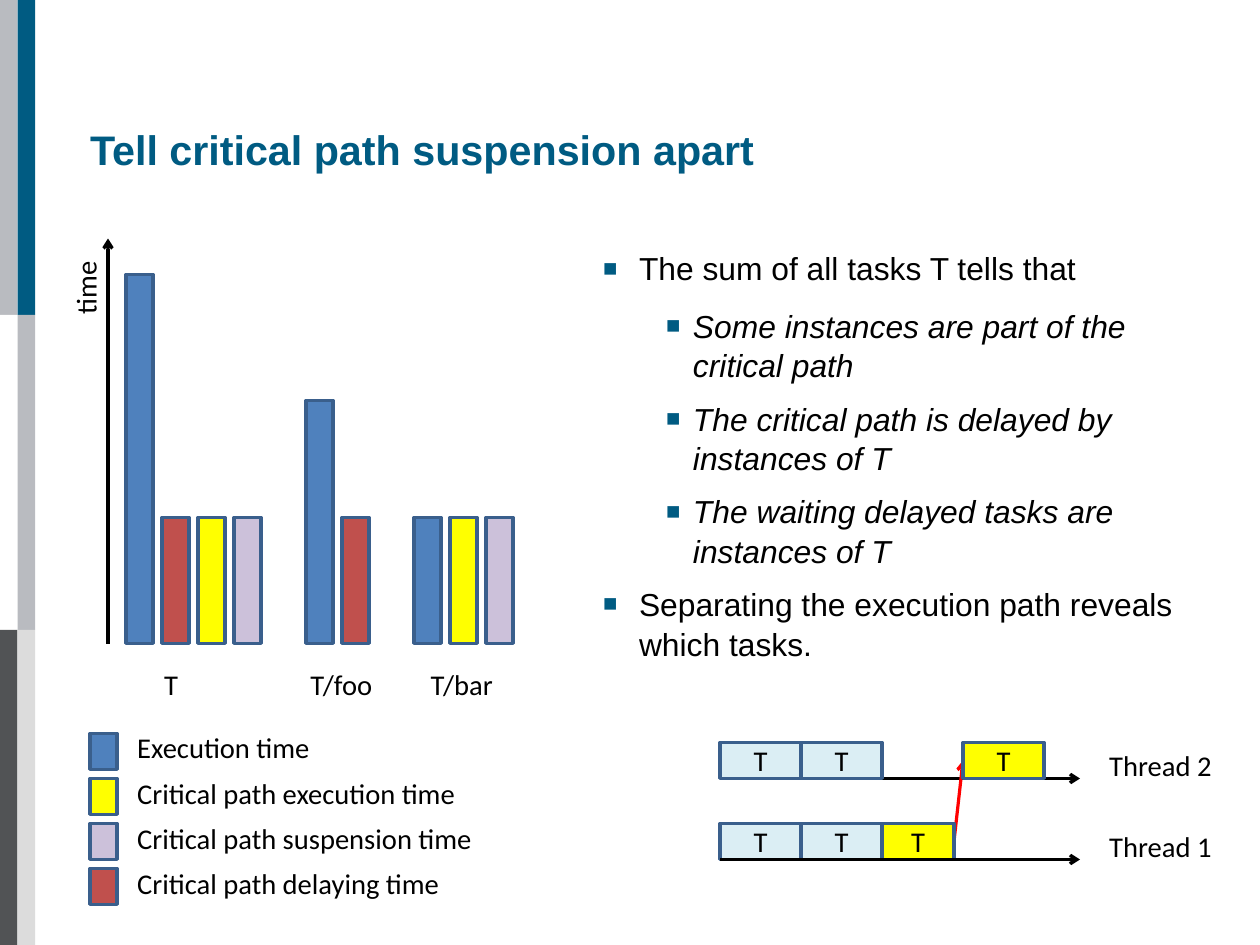
from lxml.etree import SubElement
from pptx import Presentation
from pptx.dml.color import RGBColor
from pptx.enum.shapes import MSO_CONNECTOR, MSO_SHAPE
from pptx.enum.text import MSO_ANCHOR, MSO_AUTO_SIZE, PP_ALIGN
from pptx.oxml.ns import qn
from pptx.util import Cm, Pt

TEAL = RGBColor(0x00, 0x5B, 0x82)
SILVER = RGBColor(0xB9, 0xBB, 0xC0)
WHITE = RGBColor(0xFF, 0xFF, 0xFF)
SLATE = RGBColor(0x51, 0x53, 0x55)
PALE = RGBColor(0xDC, 0xDC, 0xDC)
BLACK = RGBColor(0x00, 0x00, 0x00)
EDGE = RGBColor(0x3A, 0x5F, 0x8C)
BLUE = RGBColor(0x4F, 0x81, 0xBD)
RED = RGBColor(0xC0, 0x50, 0x4D)
YELLOW = RGBColor(0xFF, 0xFF, 0x00)
LILAC = RGBColor(0xCC, 0xC1, 0xDA)
ICE = RGBColor(0xDB, 0xEE, 0xF4)
SIGNAL = RGBColor(0xFF, 0x00, 0x00)

deck = Presentation()
deck.slide_width, deck.slide_height = Cm(28), Cm(21)
slide = deck.slides.add_slide(deck.slide_layouts[1])
shapes = slide.shapes


def block(left, top, width, height, fill, edge=EDGE):
    box = shapes.add_shape(MSO_SHAPE.RECTANGLE, Cm(left), Cm(top), Cm(width), Cm(height))
    box.shadow.inherit = False
    box.fill.solid()
    box.fill.fore_color.rgb = fill
    if edge is None:
        box.line.fill.background()
    else:
        box.line.color.rgb = edge
        box.line.width = Pt(2)
    return box


def arrow(x1, y1, x2, y2, color=BLACK):
    line = shapes.add_connector(MSO_CONNECTOR.STRAIGHT, Cm(x1), Cm(y1), Cm(x2), Cm(y2))
    line.line.color.rgb = color
    line.line.width = Pt(2)
    SubElement(line.line._get_or_add_ln(), qn("a:tailEnd"), type="arrow")
    SubElement(line._element.spPr, qn("a:effectLst"))


# Side stripes
stripes = [(SILVER, TEAL), (WHITE, SILVER), (SLATE, PALE)]
for row, pair in enumerate(stripes):
    for col, color in enumerate(pair):
        block(col * 0.39, row * 7, 0.39, 7, color, None)

# Title
title = shapes.title
title.left, title.top, title.width, title.height = Cm(2), Cm(1.8), Cm(25.2), Cm(3)
frame = title.text_frame
frame.text = "Tell critical path suspension apart"
frame.auto_size = MSO_AUTO_SIZE.NONE
frame.vertical_anchor = MSO_ANCHOR.MIDDLE
frame.margin_left = frame.margin_right = frame.margin_top = frame.margin_bottom = 0
head = frame.paragraphs[0]
head.alignment = PP_ALIGN.LEFT
head.font.name, head.font.size, head.font.bold = "Arial", Pt(26), True
head.font.color.rgb = TEAL

# Bullet list
body = slide.placeholders[1]
body.left, body.top, body.width, body.height = Cm(11.8), Cm(5.5), Cm(15.4), Cm(10.2)
frame = body.text_frame
frame.auto_size = MSO_AUTO_SIZE.NONE
frame.margin_left = frame.margin_right = frame.margin_top = frame.margin_bottom = 0
points = [
    (1, "The sum of all tasks T tells that"),
    (2, "Some instances are part of the critical path"),
    (2, "The critical path is delayed by instances of T"),
    (2, "The waiting delayed tasks are instances of T"),
    (1, "Separating the execution path reveals which tasks."),
]
indents = {1: (2.4, 0.8, 11.3), 2: (3.6, 0.6, 8.5)}
frame.text = "\n".join(text for _, text in points)
for para, (level, _) in zip(frame.paragraphs, points):
    margin, hang, after = indents[level]
    para.level = level
    para.alignment = PP_ALIGN.LEFT
    para.line_spacing = 1.04
    para.space_before, para.space_after = Pt(0), Pt(after)
    props = para._p.get_or_add_pPr()
    props.set("marL", str(Cm(margin)))
    props.set("indent", str(-Cm(hang)))
    SubElement(SubElement(props, qn("a:buClr")), qn("a:srgbClr"), val=str(TEAL))
    SubElement(props, qn("a:buSzPct"), val="75000")
    SubElement(props, qn("a:buFont"), typeface="Arial")
    SubElement(props, qn("a:buChar"), char="■")
    para.font.name, para.font.size = "Arial", Pt(20)
    para.font.italic = level == 2
    para.font.color.rgb = BLACK

# Bars, all standing on one base line
base = 14.3
arrow(2.4, base, 2.4, 5.3)
groups = [
    (2.8, [(8.2, BLUE), (2.8, RED), (2.8, YELLOW), (2.8, LILAC)]),
    (6.8, [(5.4, BLUE), (2.8, RED)]),
    (9.2, [(2.8, BLUE), (2.8, YELLOW), (2.8, LILAC)]),
]
for left, bars in groups:
    for i, (height, color) in enumerate(bars):
        block(left + i * 0.8, base - height, 0.6, height, color)

# Legend keys
for i, color in enumerate([BLUE, YELLOW, LILAC, RED]):
    block(2, 16.3 + i, 0.6, 0.8, color)

# Threads
arrow(16, 17.3, 24, 17.3)
arrow(21.2, 18.7, 21.4, 16.9, SIGNAL)
tasks = [
    (16, 16.5, 1.8, ICE), (17.8, 16.5, 1.8, ICE), (21.4, 16.5, 1.8, YELLOW),
    (16, 18.3, 1.8, ICE), (17.8, 18.3, 1.8, ICE), (19.6, 18.3, 1.6, YELLOW),
]
for left, top, width, color in tasks:
    task = block(left, top, width, 0.8, color)
    task.text_frame.text = "T"
    task.text_frame.vertical_anchor = MSO_ANCHOR.MIDDLE
    para = task.text_frame.paragraphs[0]
    para.alignment = PP_ALIGN.CENTER
    para.font.name, para.font.size = "Calibri", Pt(18)
    para.font.color.rgb = BLACK
arrow(16, 19.1, 24, 19.1)

# Labels
keys = [
    "Execution time",
    "Critical path execution time",
    "Critical path suspension time",
    "Critical path delaying time",
]
labels = [
    (1.04, 5.87, 1.72, 1.02, 270, ["time"]),
    (3.4, 14.7, 8.4, 1.02, 0, ["T\tT/foo\tT/bar"]),
    (2.8, 16.1, 9, 4.2, 0, keys),
    (24.4, 16.5, 3.2, 1.02, 0, ["Thread 2"]),
    (24.4, 18.3, 3.2, 1.02, 0, ["Thread 1"]),
]
for left, top, width, height, turn, lines in labels:
    label = shapes.add_textbox(Cm(left), Cm(top), Cm(width), Cm(height))
    label.rotation = turn
    frame = label.text_frame
    frame.word_wrap = True
    frame.text = "\n".join(lines)
    for i, para in enumerate(frame.paragraphs):
        if i:
            para.space_before = Pt(7)
        if "\t" in lines[i]:
            tabs = SubElement(para._p.get_or_add_pPr(), qn("a:tabLst"))
            for stop in (3.25, 5.92):
                SubElement(tabs, qn("a:tab"), pos=str(Cm(stop)), algn="l")
        para.font.name, para.font.size = "Calibri", Pt(18)
        para.font.color.rgb = BLACK

deck.save("out.pptx")
